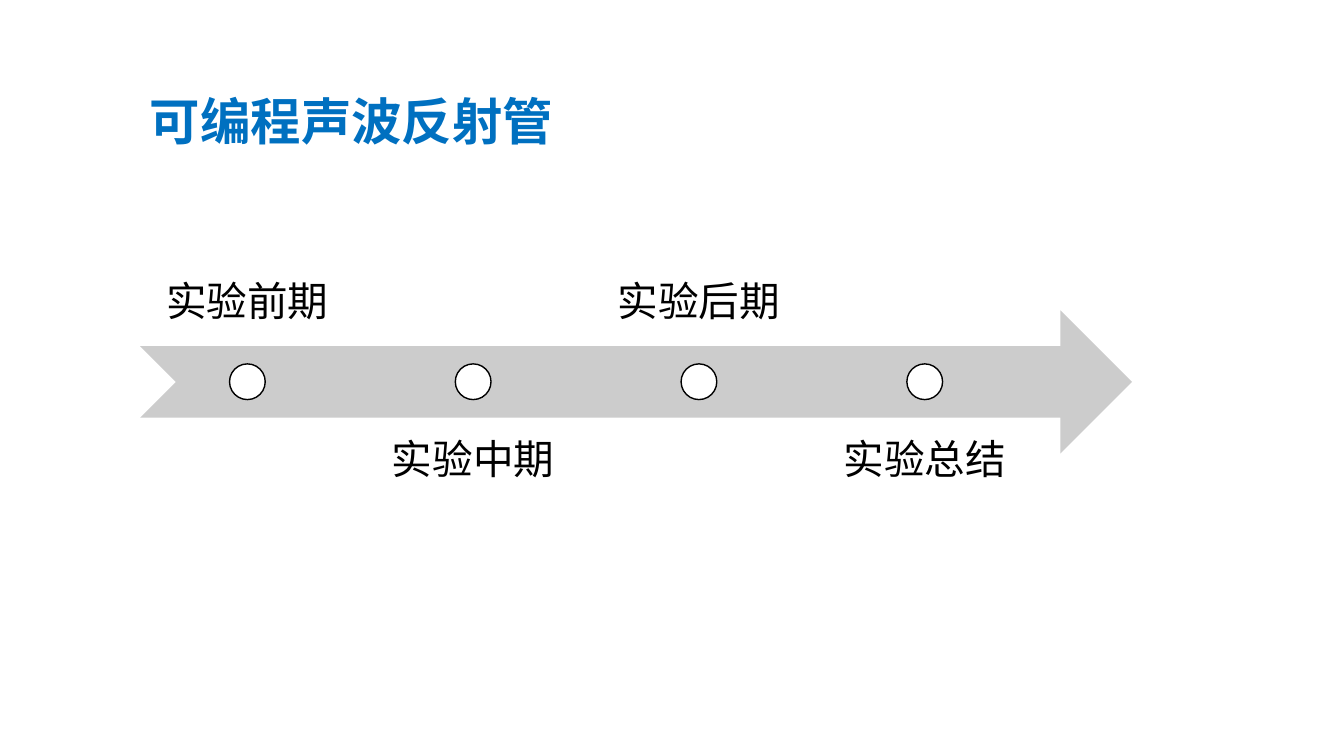
import pptx
import pptx.util
import pptx.dml.color
import pptx.enum.shapes
import pptx.enum.text
import pptx.oxml
import pptx.oxml.ns

Cm = pptx.util.Cm
SHAPES = pptx.enum.shapes.MSO_SHAPE
ANCHOR = pptx.enum.text.MSO_ANCHOR
ALIGN = pptx.enum.text.PP_ALIGN

BLUE = pptx.dml.color.RGBColor(0x00, 0x70, 0xC0)
GREY = pptx.dml.color.RGBColor(0xCC, 0xCC, 0xCC)
WHITE = pptx.dml.color.RGBColor(0xFF, 0xFF, 0xFF)
BLACK = pptx.dml.color.RGBColor(0x00, 0x00, 0x00)
CHINESE_FONT = "Noto Sans CJK SC"

deck = pptx.Presentation()
deck.slide_width = Cm(33.87)
deck.slide_height = Cm(19.05)
page = deck.slides.add_slide(deck.slide_layouts[6])


def add_text(text, left, top, width, height, size, color, font, anchor,
             align=ALIGN.LEFT, bold=False, spacing=0.9, inset_x=0.25, inset_y=0.13):
    box = page.shapes.add_textbox(Cm(left), Cm(top), Cm(width), Cm(height))
    frame = box.text_frame
    frame.word_wrap = True
    frame.vertical_anchor = anchor
    frame.margin_left = frame.margin_right = Cm(inset_x)
    frame.margin_top = frame.margin_bottom = Cm(inset_y)
    para = frame.paragraphs[0]
    para.alignment = align
    para.line_spacing = spacing
    span = para.add_run()
    span.text = text
    span.font.size = pptx.util.Pt(size)
    span.font.bold = bold
    span.font.color.rgb = color
    span.font.name = font
    east_asian = pptx.oxml.parse_xml(
        f'<a:ea {pptx.oxml.ns.nsdecls("a")} typeface="{CHINESE_FONT}"/>')
    span.font._element.append(east_asian)


add_text("可编程声波反射管", 3.53, 2.34, 11, 1.57, size=36, color=BLUE,
         font=CHINESE_FONT, anchor=ANCHOR.BOTTOM, bold=True, spacing=0.8)

timeline = page.shapes.add_shape(
    SHAPES.NOTCHED_RIGHT_ARROW, Cm(3.53), Cm(7.82), Cm(25), Cm(3.61))
timeline.shadow.inherit = False
timeline.fill.solid()
timeline.fill.fore_color.rgb = GREY
timeline.line.fill.background()

STAGE_LEFT, STAGE_STEP, STAGE_WIDTH, STAGE_HEIGHT = 3.53, 5.69, 5.41, 3.61
DOT_TOP, DOT_SIZE = 9.17, 0.9

for index, stage in enumerate(["实验前期", "实验中期", "实验后期", "实验总结"]):
    left = STAGE_LEFT + index * STAGE_STEP
    above = index % 2 == 0
    add_text(stage, left, 5.13 if above else 10.52, STAGE_WIDTH, STAGE_HEIGHT,
             size=29, color=BLACK, font="Cabin", align=ALIGN.CENTER,
             anchor=ANCHOR.BOTTOM if above else ANCHOR.TOP,
             inset_x=0.57, inset_y=0.57)
    dot = page.shapes.add_shape(
        SHAPES.OVAL, Cm(left + (STAGE_WIDTH - DOT_SIZE) / 2), Cm(DOT_TOP),
        Cm(DOT_SIZE), Cm(DOT_SIZE))
    dot.shadow.inherit = False
    dot.fill.solid()
    dot.fill.fore_color.rgb = WHITE
    dot.line.color.rgb = BLACK
    dot.line.width = pptx.util.Pt(1)

deck.save("out.pptx")
